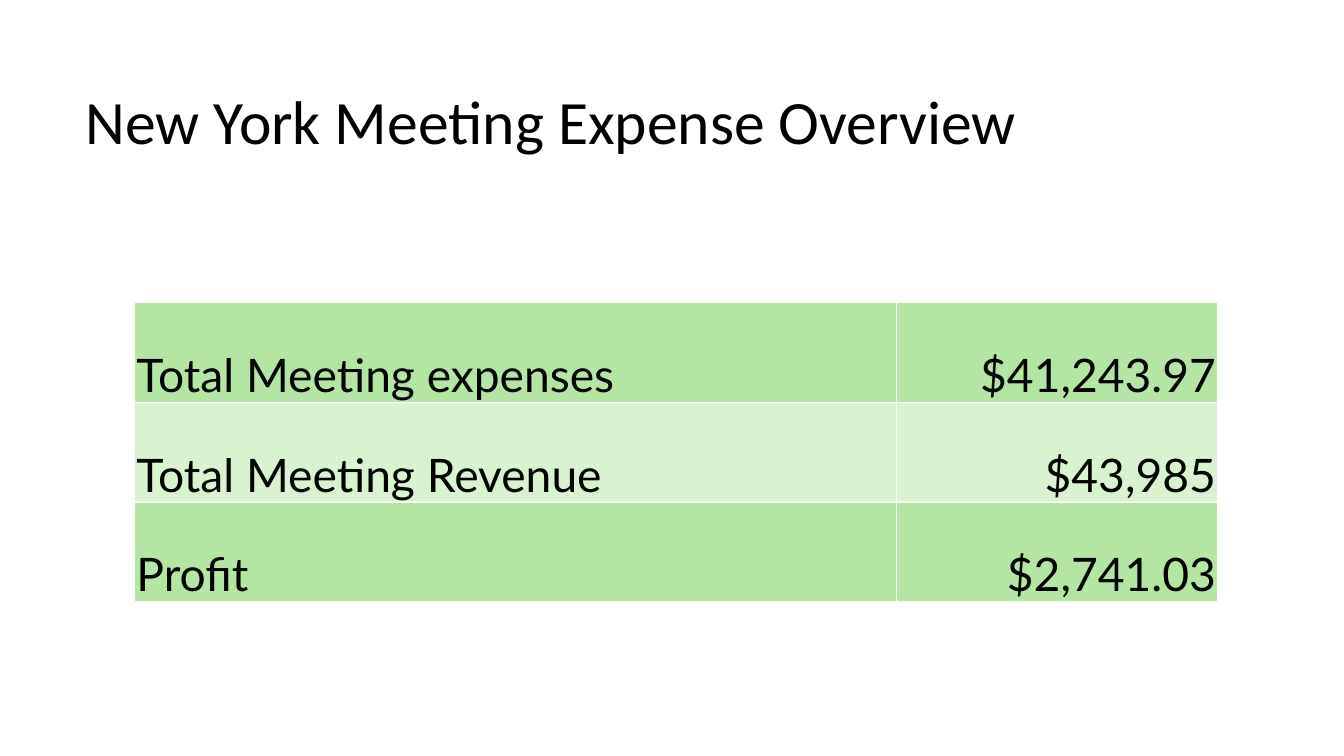
from lxml.etree import SubElement
from pptx import Presentation
from pptx.dml.color import RGBColor
from pptx.enum.text import MSO_ANCHOR as Anchor, PP_ALIGN as Align
from pptx.oxml.ns import qn
from pptx.util import Pt

COLORS = {"text": "000000", "border": "FFFFFF", "dark_row": "B4E5A2", "light_row": "D9F2D0"}
EXPENSES = [
    ("Total Meeting expenses", "$41,243.97"),
    ("Total Meeting Revenue", "$43,985"),
    ("Profit", "$2,741.03"),
]


def apply(target, values):
    for name, value in values.items():
        setattr(target, name, value)


class SlideBuilder:
    title_font = {"name": "Calibri", "size": Pt(44), "bold": False}
    table_font = {"name": "Lato", "size": Pt(33), "bold": False}
    title_frame = {"vertical_anchor": Anchor.TOP, "word_wrap": True, "margin_left": Pt(7.2),
                   "margin_right": Pt(7.2), "margin_top": Pt(6), "margin_bottom": Pt(3.6)}
    cell_format = {"vertical_anchor": Anchor.BOTTOM, "margin_left": Pt(1.5),
                   "margin_right": Pt(1.5), "margin_top": Pt(1.5), "margin_bottom": 0}

    def __init__(self, presentation):
        self.slide = presentation.slides.add_slide(presentation.slide_layouts[5])

    def set_text(self, paragraph, text, font, alignment):
        paragraph.text = text
        paragraph.alignment = alignment
        run_font = paragraph.runs[0].font
        apply(run_font, font)
        run_font.color.rgb = RGBColor.from_string(COLORS["text"])

    def title(self, text, left, top, width, height):
        shape = self.slide.shapes.title
        apply(shape, {"left": Pt(left), "top": Pt(top), "width": Pt(width), "height": Pt(height)})
        apply(shape.text_frame, self.title_frame)
        self.set_text(shape.text_frame.paragraphs[0], text, self.title_font, Align.LEFT)

    def border(self, cell):
        properties = cell._tc.get_or_add_tcPr()
        for position, side in enumerate(("lnL", "lnR", "lnT", "lnB")):
            line = SubElement(properties, qn(f"a:{side}"), w=str(Pt(1)))
            fill = SubElement(line, qn("a:solidFill"))
            SubElement(fill, qn("a:srgbClr"), val=COLORS["border"])
            properties.insert(position, line)

    def table(self, rows, left, top, column_widths, row_height):
        frame = self.slide.shapes.add_table(
            len(rows), len(column_widths), Pt(left), Pt(top),
            Pt(sum(column_widths)), Pt(row_height * len(rows)))
        table = frame.table
        apply(table, {"first_row": False, "horz_banding": False})
        for column, width in zip(table.columns, column_widths):
            column.width = Pt(width)
        for row_index, values in enumerate(rows):
            table.rows[row_index].height = Pt(row_height)
            row_color = COLORS["light_row" if row_index % 2 else "dark_row"]
            for column_index, text in enumerate(values):
                cell = table.cell(row_index, column_index)
                apply(cell, self.cell_format)
                cell.fill.solid()
                cell.fill.fore_color.rgb = RGBColor.from_string(row_color)
                self.border(cell)
                alignment = Align.RIGHT if column_index else Align.LEFT
                self.set_text(cell.text_frame.paragraphs[0], text, self.table_font, alignment)


def main():
    presentation = Presentation()
    apply(presentation, {"slide_width": Pt(960), "slide_height": Pt(540)})
    builder = SlideBuilder(presentation)
    builder.title("New York Meeting Expense Overview", 54, 53.3, 825, 91.4)
    builder.table(EXPENSES, 96, 216, (544.3, 229.7), 71.3)
    presentation.save("out.pptx")


if __name__ == "__main__":
    main()
